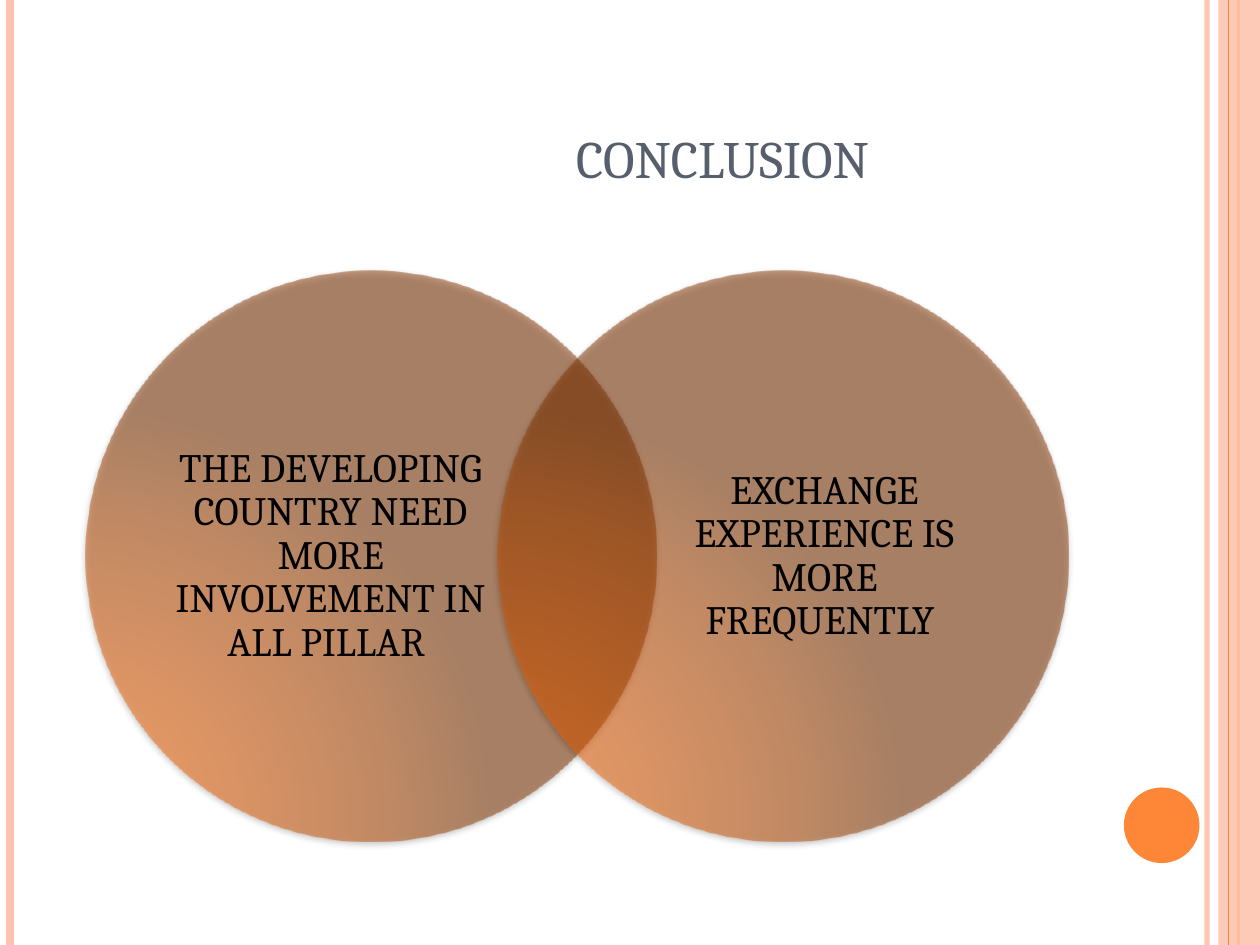
import pptx
import pptx.util
import pptx.dml.color
import pptx.enum.shapes
import pptx.enum.text
import pptx.oxml
import pptx.oxml.ns
import lxml.etree
from dataclasses import dataclass


@dataclass(frozen=True)
class Theme:
    font: str = "Cambria"
    accent: str = "FE8637"
    band: str = "FEC3AE"
    heading: str = "575F6D"
    body: str = "000000"
    heading_size: float = 30
    body_size: float = 23
    venn_stops: tuple = ((0, "FD6400"), (30, "F46100"), (75, "B74900"), (100, "873600"))
    venn_alpha: int = 50


THEME = Theme()
WIDTH, HEIGHT = 10, 7.5
SHAPES = pptx.enum.shapes.MSO_SHAPE
ANCHOR = pptx.enum.text.MSO_ANCHOR
NS = pptx.oxml.ns.nsdecls("a")
inches = pptx.util.Inches


def rgb(value):
    return pptx.dml.color.RGBColor.from_string(value)


def apply_format(target, values):
    for key, value in values.items():
        setattr(target, key, value)


def set_alpha(fill_owner, percent):
    color = fill_owner.find(".//" + pptx.oxml.ns.qn("a:srgbClr"))
    alpha = lxml.etree.SubElement(color, pptx.oxml.ns.qn("a:alpha"))
    alpha.set("val", str(percent * 1000))


def place(part, box):
    apply_format(part, dict(zip(("left", "top", "width", "height"), map(inches, box))))


def add_filled(shapes, kind, box, color):
    part = shapes.add_shape(kind, *map(inches, box))
    part.shadow.inherit = False
    part.fill.solid()
    part.fill.fore_color.rgb = rgb(color)
    part.line.fill.background()
    return part


def add_rule(shapes, x, box, color, weight, alpha=100):
    left, top, width, height = box
    rule = shapes.add_connector(
        pptx.enum.shapes.MSO_CONNECTOR.STRAIGHT,
        *map(inches, (left + x, top, left + x, top + height)))
    rule.line.color.rgb = rgb(color)
    rule.line.width = pptx.util.Pt(weight)
    properties = rule._element.spPr
    if alpha < 100:
        set_alpha(properties, alpha)
    lxml.etree.SubElement(properties, pptx.oxml.ns.qn("a:effectLst"))


def write(frame, wording, frame_format, font_format, color, line_spacing):
    apply_format(frame, {"word_wrap": True, **frame_format})
    paragraph = frame.paragraphs[0]
    apply_format(paragraph, {
        "alignment": pptx.enum.text.PP_ALIGN.CENTER, "line_spacing": line_spacing})
    run = paragraph.add_run()
    run.text = wording
    apply_format(run.font, {"name": THEME.font, **font_format})
    run.font.color.rgb = rgb(color)


def draw_borders(shapes, box):
    left, top, width, height = box
    add_rule(shapes, 9.58, box, THEME.band, 3, 93)
    add_rule(shapes, 0.08, box, THEME.band, 4.5)
    add_rule(shapes, 9.83, box, THEME.accent, 1.5)
    margin = add_filled(shapes, SHAPES.RECTANGLE, (left + 9.67, top, 0.33, height), THEME.band)
    set_alpha(margin._element.spPr, 87)
    add_rule(shapes, 9.75, box, THEME.accent, 0.75)
    add_filled(shapes, SHAPES.OVAL, (left + 8.92, top + 6.25, 0.6, 0.6), THEME.accent)


def draw_heading(title, box):
    place(title, box)
    write(title.text_frame, "CONCLUSION",
          {"vertical_anchor": ANCHOR.BOTTOM, "margin_left": inches(2.4),
           "auto_size": pptx.enum.text.MSO_AUTO_SIZE.NONE},
          {"size": pptx.util.Pt(THEME.heading_size)}, THEME.heading, 1)


def shade_circle(circle):
    properties = circle._element.spPr
    stops = "".join(
        f'<a:gs pos="{position * 1000}"><a:srgbClr val="{color}">'
        f'<a:alpha val="{THEME.venn_alpha * 1000}"/></a:srgbClr></a:gs>'
        for position, color in THEME.venn_stops)
    gradient = pptx.oxml.parse_xml(
        f'<a:gradFill {NS} rotWithShape="1"><a:gsLst>{stops}</a:gsLst><a:path path="circle">'
        '<a:fillToRect l="5000" t="100000" r="120000" b="10000"/></a:path></a:gradFill>')
    shadow = pptx.oxml.parse_xml(
        f'<a:outerShdw {NS} blurRad="50800" dist="20320" dir="5400000" rotWithShape="0">'
        '<a:srgbClr val="000000"><a:alpha val="42000"/></a:srgbClr></a:outerShdw>')
    properties.replace(properties.find(pptx.oxml.ns.qn("a:solidFill")), gradient)
    properties.find(pptx.oxml.ns.qn("a:effectLst")).append(shadow)


def draw_venn(shapes, box, statements):
    left, top, width, diameter = box
    step = (width - diameter) / (len(statements) - 1)
    for index, (statement, inset) in enumerate(statements):
        x = left + index * step
        circle = add_filled(shapes, SHAPES.OVAL, (x, top, diameter, diameter), THEME.accent)
        shade_circle(circle)
        caption = shapes.add_textbox(
            *map(inches, (x + inset, top + 0.53, 2.61, diameter - 2 * 0.53)))
        no_margins = dict.fromkeys(
            ("margin_left", "margin_top", "margin_right", "margin_bottom"), 0)
        write(caption.text_frame, statement,
              {"vertical_anchor": ANCHOR.MIDDLE, **no_margins},
              {"size": pptx.util.Pt(THEME.body_size)}, THEME.body, 0.9)


def main():
    deck = pptx.Presentation()
    deck.slide_width, deck.slide_height = inches(WIDTH), inches(HEIGHT)
    slide = deck.slides.add_slide(deck.slide_layouts.get_by_name("Title Only"))
    draw_borders(slide.shapes, (0, 0, WIDTH, HEIGHT))
    draw_heading(slide.shapes.title, (0.5, 0.3, 8.17, 1.25))
    venn = slide.shapes.add_group_shape()
    draw_venn(venn.shapes, (0.68, 2.15, 7.8, 4.53), (
        ("THE DEVELOPING COUNTRY NEED MORE INVOLVEMENT IN ALL PILLAR ", 0.64),
        ("EXCHANGE EXPERIENCE IS MORE FREQUENTLY ", 1.29)))
    deck.save("out.pptx")


if __name__ == "__main__":
    main()
